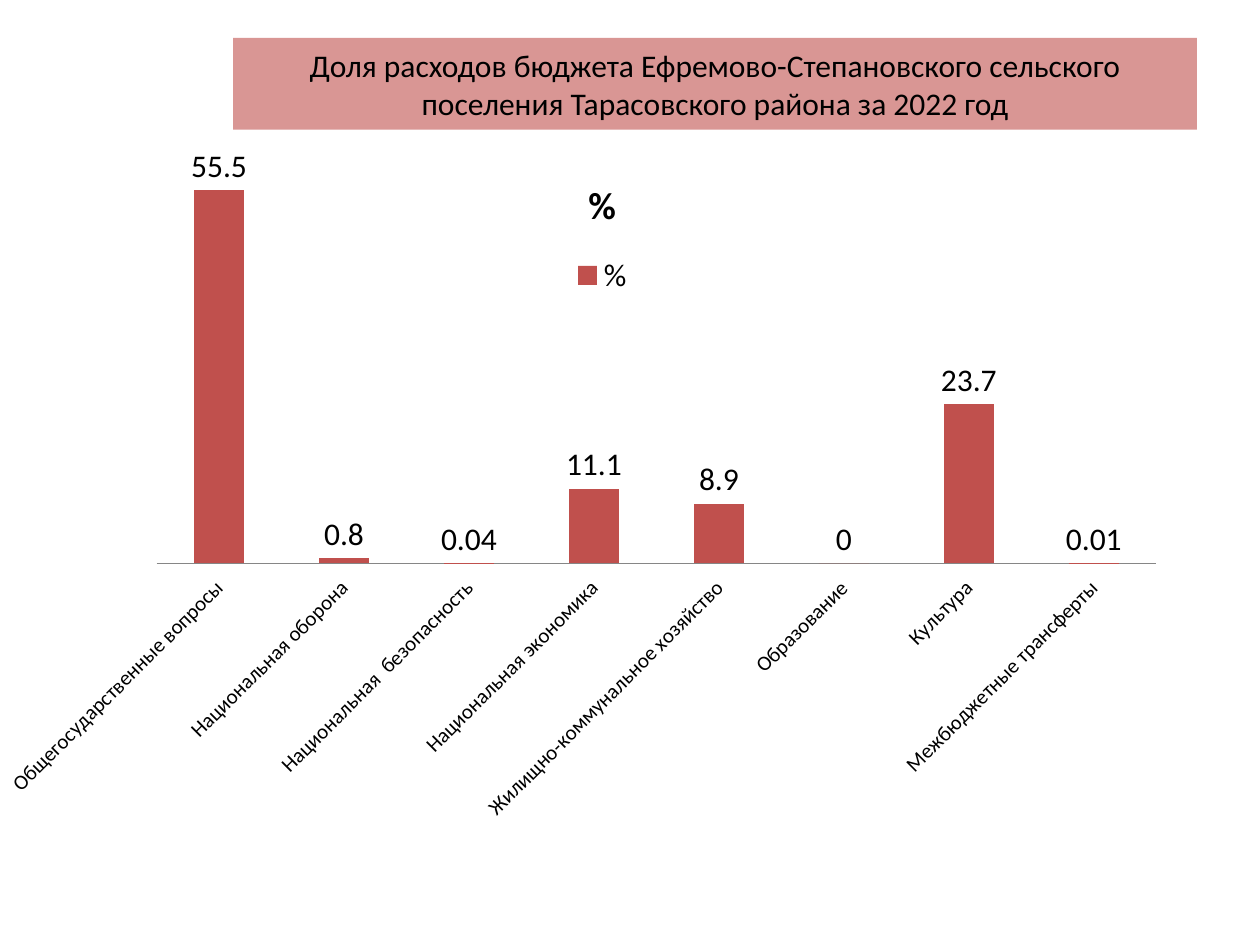
from lxml import etree
from pptx import Presentation
from pptx.chart.data import CategoryChartData
from pptx.dml.color import RGBColor
from pptx.enum.chart import (XL_CHART_TYPE, XL_LABEL_POSITION,
                             XL_LEGEND_POSITION, XL_TICK_LABEL_POSITION, XL_TICK_MARK)
from pptx.enum.shapes import MSO_SHAPE
from pptx.enum.text import MSO_ANCHOR, PP_ALIGN
from pptx.oxml.ns import qn
from pptx.util import Inches, Pt

COLUMN = XL_CHART_TYPE.COLUMN_CLUSTERED
OUTSIDE = XL_LABEL_POSITION.OUTSIDE_END
TOP = XL_LEGEND_POSITION.TOP
LOW = XL_TICK_LABEL_POSITION.LOW
NO_TICK = XL_TICK_MARK.NONE
RECT = MSO_SHAPE.RECTANGLE
MIDDLE = MSO_ANCHOR.MIDDLE
CENTER = PP_ALIGN.CENTER

WIDTH, HEIGHT = Inches(10), Inches(7.5)
FONT = "Calibri"
COLORS = {"band": "D99694", "bar": "C0504D", "axis": "868686", "text": "000000"}
HEAD = ("Доля расходов бюджета Ефремово-Степановского сельского "
        "поселения Тарасовского района за 2022 год")
UNIT = "%"
SHARES = {
    "Общегосударственные вопросы": 55.5,
    "Национальная оборона": 0.8,
    "Национальная  безопасность": 0.04,
    "Национальная экономика": 11.1,
    "Жилищно-коммунальное хозяйство": 8.9,
    "Образование": 0,
    "Культура": 23.7,
    "Межбюджетные трансферты": 0.01,
}
PLOT = {"x": 0.13, "y": 0.015, "w": 0.83, "h": 0.506}


def color(name):
    return RGBColor.from_string(COLORS[name])


def place(left, top, width, height):
    return (int(WIDTH * left / 100), int(HEIGHT * top / 100),
            int(WIDTH * width / 100), int(HEIGHT * height / 100))


def style(font, size, bold=False):
    font.name = FONT
    font.size = Pt(size)
    font.bold = bold
    font.color.rgb = color("text")


def add_head(slide, box):
    band = slide.shapes.add_shape(RECT, *box)
    band.shadow.inherit = False
    band.fill.solid()
    band.fill.fore_color.rgb = color("band")
    band.line.fill.background()
    frame = band.text_frame
    frame.word_wrap = True
    frame.vertical_anchor = MIDDLE
    line = frame.paragraphs[0]
    line.text = HEAD
    line.alignment = CENTER
    style(line.font, 18)


def set_plot(chart):
    area = chart.element.find(".//" + qn("c:plotArea"))
    for old in area.findall(qn("c:layout")):
        area.remove(old)
    layout = etree.Element(qn("c:layout"))
    manual = etree.SubElement(layout, qn("c:manualLayout"))
    parts = {"layoutTarget": "inner", "xMode": "edge", "yMode": "edge", **PLOT}
    for tag, val in parts.items():
        etree.SubElement(manual, qn("c:" + tag)).set("val", str(val))
    area.insert(0, layout)


def tilt_names(chart):
    axis = chart.element.find(".//" + qn("c:catAx"))
    axis.find(qn("c:txPr")).find(qn("a:bodyPr")).set("rot", "-2700000")


def add_bars(slide, box):
    data = CategoryChartData()
    data.categories = list(SHARES)
    data.add_series(UNIT, list(SHARES.values()))
    chart = slide.shapes.add_chart(COLUMN, *box, data).chart
    style(chart.font, 18)
    set_plot(chart)

    chart.has_title = True
    title = chart.chart_title.text_frame.paragraphs[0]
    title.text = UNIT
    style(title.font, 21.6, True)
    chart.has_legend = True
    chart.legend.position = TOP
    chart.legend.include_in_layout = False
    style(chart.legend.font, 18)

    plot = chart.plots[0]
    plot.gap_width = 150
    plot.vary_by_categories = False
    fill = plot.series[0].format.fill
    fill.solid()
    fill.fore_color.rgb = color("bar")
    plot.has_data_labels = True
    labels = plot.data_labels
    labels.show_value = True
    labels.position = OUTSIDE
    style(labels.font, 18)

    scale = chart.value_axis
    scale.visible = False
    scale.has_major_gridlines = False
    scale.minimum_scale = 0
    scale.maximum_scale = 60
    names = chart.category_axis
    names.major_tick_mark = NO_TICK
    names.tick_label_position = LOW
    names.format.line.color.rgb = color("axis")
    style(names.tick_labels.font, 12)
    tilt_names(chart)


def main():
    deck = Presentation()
    deck.slide_width, deck.slide_height = WIDTH, HEIGHT
    slide = deck.slides.add_slide(deck.slide_layouts[6])
    add_head(slide, place(18.5, 4, 76.5, 9.73))
    add_bars(slide, place(0, 15.6, 95.6, 84.4))
    deck.save("out.pptx")


if __name__ == "__main__":
    main()
